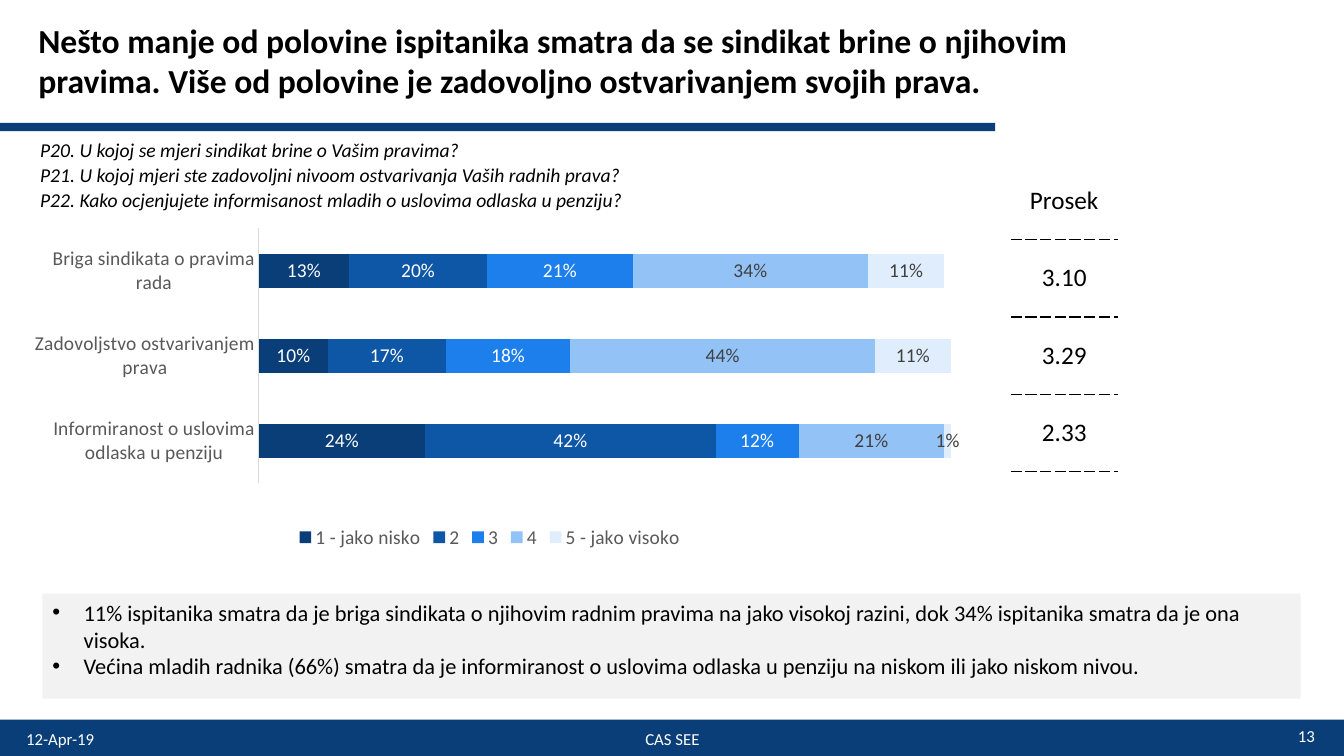
from dataclasses import dataclass

from lxml.etree import SubElement
from pptx import Presentation
from pptx.chart.data import CategoryChartData
from pptx.dml.color import RGBColor
from pptx.enum.chart import XL_CHART_TYPE, XL_LABEL_POSITION, XL_LEGEND_POSITION, XL_TICK_MARK
from pptx.enum.shapes import MSO_SHAPE
from pptx.enum.text import MSO_ANCHOR, MSO_AUTO_SIZE, PP_ALIGN
from pptx.oxml import parse_xml
from pptx.oxml.ns import nsdecls, qn
from pptx.util import Inches, Pt


@dataclass(frozen=True)
class Theme:
    """Colours, font and type sizes of the slide."""
    font: str = "Calibri"
    navy: str = "0A3E78"
    black: str = "000000"
    white: str = "FFFFFF"
    panel: str = "F2F2F2"
    axis_text: str = "595959"
    axis_line: str = "D9D9D9"
    dark_label: str = "404040"
    scale: tuple = ("0A3E78", "0E56A6", "1C7FEC", "92C2F6", "E0EDFC")
    title_size: int = 24
    table_size: int = 18
    body_size: int = 16
    chart_size: int = 14
    footer_size: int = 12


THEME = Theme()

TITLE = ("Nešto manje od polovine ispitanika smatra da se sindikat brine o njihovim pravima. "
         "Više od polovine je zadovoljno ostvarivanjem svojih prava.")
QUESTIONS = [
    "P20. U kojoj se mjeri sindikat brine o Vašim pravima?",
    "P21. U kojoj mjeri ste zadovoljni nivoom ostvarivanja Vaših radnih prava?",
    "P22. Kako ocjenjujete informisanost mladih o uslovima odlaska u penziju?",
]
CATEGORIES = ["Briga sindikata o pravima rada", "Zadovoljstvo ostvarivanjem prava",
              "Informiranost o uslovima odlaska u penziju"]
ANSWERS = {
    "1 - jako nisko": (0.13, 0.10, 0.24),
    "2": (0.20, 0.17, 0.42),
    "3": (0.21, 0.18, 0.12),
    "4": (0.34, 0.44, 0.21),
    "5 - jako visoko": (0.11, 0.11, 0.01),
}
AVERAGES = ["Prosek", "3.10", "3.29", "2.33"]
FINDINGS = [
    "11% ispitanika smatra da je briga sindikata o njihovim radnim pravima na jako visokoj razini, "
    "dok 34% ispitanika smatra da je ona visoka.",
    "Većina mladih radnika (66%) smatra da je informiranost o uslovima odlaska u penziju "
    "na niskom ili jako niskom nivou.",
]


def format_font(font, size, color, bold=False, italic=False):
    """Apply the theme font with the given size, colour and style."""
    font.name = THEME.font
    font.size = Pt(size)
    font.bold = bold
    font.italic = italic
    font.color.rgb = RGBColor.from_string(color)


def write_text(frame, lines, size, color=THEME.black, bold=False, italic=False,
               align=PP_ALIGN.LEFT, anchor=MSO_ANCHOR.TOP, spacing=1.0, bullet=False):
    """Fill a text frame with one formatted paragraph per line."""
    frame.word_wrap = True
    frame.auto_size = MSO_AUTO_SIZE.NONE
    frame.vertical_anchor = anchor
    for index, line in enumerate(lines):
        paragraph = frame.add_paragraph() if index else frame.paragraphs[0]
        paragraph.text = line
        paragraph.alignment = align
        paragraph.line_spacing = spacing
        paragraph.space_before = Pt(0)
        if bullet:
            properties = paragraph._p.get_or_add_pPr()
            properties.set("marL", str(Inches(0.31)))
            properties.set("indent", str(-Inches(0.31)))
            SubElement(properties, qn("a:buFont"), typeface="Arial")
            SubElement(properties, qn("a:buChar"), char="•")
        for run in paragraph.runs:
            format_font(run.font, size, color, bold, italic)


def place(shape, box):
    """Move and size a shape to a box of inches."""
    shape.left, shape.top, shape.width, shape.height = map(Inches, box)


def add_band(slide, box):
    """Draw a navy band."""
    band = slide.shapes.add_shape(MSO_SHAPE.RECTANGLE, *map(Inches, box))
    band.shadow.inherit = False
    band.fill.solid()
    band.fill.fore_color.rgb = RGBColor.from_string(THEME.navy)
    band.line.fill.background()


def add_text(slide, box, lines, **text_format):
    """Add a text box with formatted lines."""
    write_text(slide.shapes.add_textbox(*map(Inches, box)).text_frame, lines, **text_format)


def add_header(slide, box):
    """Place the title and the rule below it."""
    left, top, width, height = box
    place(slide.shapes.title, box)
    write_text(slide.shapes.title.text_frame, [TITLE], size=THEME.title_size, bold=True,
               anchor=MSO_ANCHOR.MIDDLE)
    add_band(slide, (0, top + height, 9.87, 0.08))


def add_answers_chart(slide, box):
    """Add the stacked bars with the share of each answer."""
    data = CategoryChartData(number_format="0%")
    data.categories = CATEGORIES
    for name, values in ANSWERS.items():
        data.add_series(name, values)
    chart = slide.shapes.add_chart(XL_CHART_TYPE.BAR_STACKED, *map(Inches, box), data).chart
    format_font(chart.font, THEME.chart_size, THEME.axis_text)
    chart.has_title = False
    chart.has_legend = True
    chart.legend.position = XL_LEGEND_POSITION.BOTTOM
    chart.legend.include_in_layout = False
    format_font(chart.legend.font, THEME.chart_size, THEME.axis_text)

    category_axis = chart.category_axis
    category_axis.reverse_order = True
    category_axis.major_tick_mark = XL_TICK_MARK.NONE
    category_axis.format.line.color.rgb = RGBColor.from_string(THEME.axis_line)
    category_axis.format.line.width = Pt(0.75)
    format_font(category_axis.tick_labels.font, THEME.chart_size, THEME.axis_text)
    value_axis = chart.value_axis
    value_axis.minimum_scale, value_axis.maximum_scale = 0, 1
    value_axis.has_major_gridlines = False
    value_axis.visible = False

    plot = chart.plots[0]
    plot.gap_width, plot.overlap = 150, 100
    plot.vary_by_categories = False
    for index, (series, color) in enumerate(zip(plot.series, THEME.scale)):
        series.format.fill.solid()
        series.format.fill.fore_color.rgb = RGBColor.from_string(color)
        labels = series.data_labels
        labels.show_value = True
        labels.number_format, labels.number_format_is_linked = "0%", False
        labels.position = XL_LABEL_POSITION.CENTER
        format_font(labels.font, THEME.chart_size, THEME.white if index < 3 else THEME.dark_label)

    plot_area = chart._chartSpace.chart.plotArea
    for layout in plot_area.findall(qn("c:layout")):
        plot_area.remove(layout)
    layout = parse_xml(f"<c:layout {nsdecls('c')}/>")
    manual = SubElement(layout, qn("c:manualLayout"))
    settings = {"layoutTarget": "inner", "xMode": "edge", "yMode": "edge",
                "x": 0.25, "y": 0.07, "w": 0.75, "h": 0.73}
    for tag, value in settings.items():
        SubElement(manual, qn(f"c:{tag}"), val=str(value))
    plot_area.insert(0, layout)


def add_dashed_border(cell, side, position):
    """Add a dashed border to one side of a table cell."""
    cell._tc.get_or_add_tcPr().insert(position, parse_xml(
        f'<a:ln{side} {nsdecls("a")} w="12700"><a:solidFill><a:srgbClr val="{THEME.black}"/>'
        f'</a:solidFill><a:prstDash val="sysDash"/></a:ln{side}>'))


def add_averages(slide, box):
    """Add the column of averages beside the bars."""
    table = slide.shapes.add_table(len(AVERAGES), 1, *map(Inches, box)).table
    table.first_row = table.horz_banding = False
    for index, text in enumerate(AVERAGES):
        cell = table.cell(index, 0)
        write_text(cell.text_frame, [text], size=THEME.table_size, align=PP_ALIGN.CENTER)
        cell.vertical_anchor = MSO_ANCHOR.MIDDLE
        cell.fill.background()
        if index:
            add_dashed_border(cell, "T", 0)
        add_dashed_border(cell, "B", 1 if index else 0)


def add_findings(slide, box):
    """Place the bulleted findings on a grey panel."""
    body = slide.placeholders[1]
    place(body, box)
    body.fill.solid()
    body.fill.fore_color.rgb = RGBColor.from_string(THEME.panel)
    write_text(body.text_frame, FINDINGS, size=THEME.body_size, bullet=True)


def add_footer(slide, box):
    """Draw the bottom band with date, organisation and page number."""
    left, top, width, height = box
    add_band(slide, box)
    for text, offset, rise, text_width, align in (
            ("12-Apr-19", 0.16, 0.01, 3.11, PP_ALIGN.LEFT),
            ("CAS SEE", 4.56, 0.01, 4.22, PP_ALIGN.CENTER),
            ("13", 10.03, 0.04, 3.11, PP_ALIGN.RIGHT)):
        add_text(slide, (left + offset, top - rise, text_width, 0.4), [text], align=align,
                 size=THEME.footer_size, color=THEME.white, anchor=MSO_ANCHOR.MIDDLE)


def main():
    """Build the survey slide and save it."""
    presentation = Presentation()
    presentation.slide_width, presentation.slide_height = Inches(13.33), Inches(7.5)
    slide = presentation.slides.add_slide(presentation.slide_layouts[1])
    add_header(slide, (0.28, -0.03, 11.42, 1.25))
    add_text(slide, (0.3, 1.3, 6.26, 0.85), QUESTIONS, size=THEME.chart_size, italic=True,
             align=PP_ALIGN.JUSTIFY, spacing=1.07)
    add_answers_chart(slide, (0.28, 2.02, 9.24, 3.47))
    add_averages(slide, (10.03, 1.61, 1.05, 3.07))
    add_findings(slide, (0.42, 5.89, 12.48, 1.04))
    add_footer(slide, (0, 7.14, 13.33, 0.36))
    presentation.save("out.pptx")


if __name__ == "__main__":
    main()
